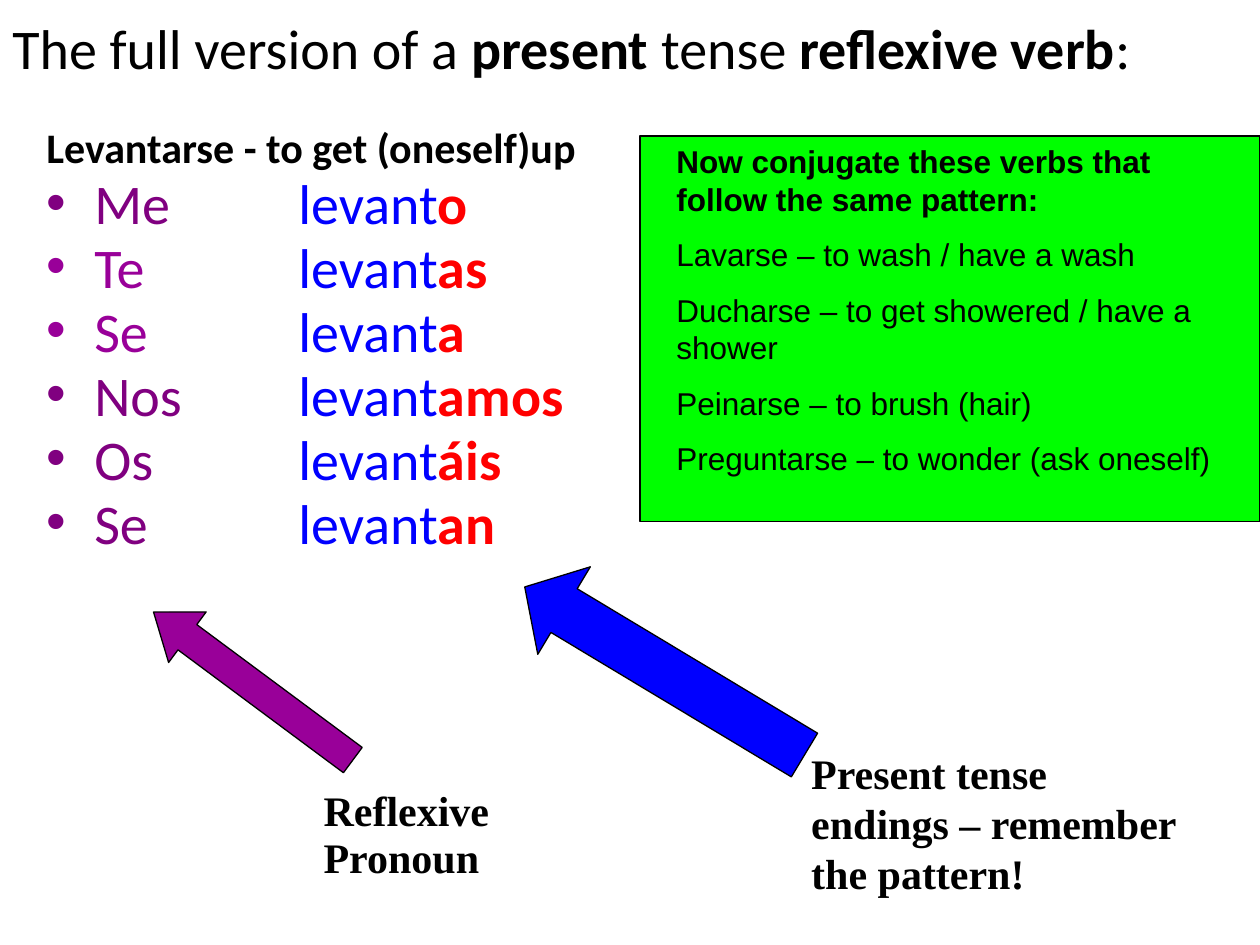
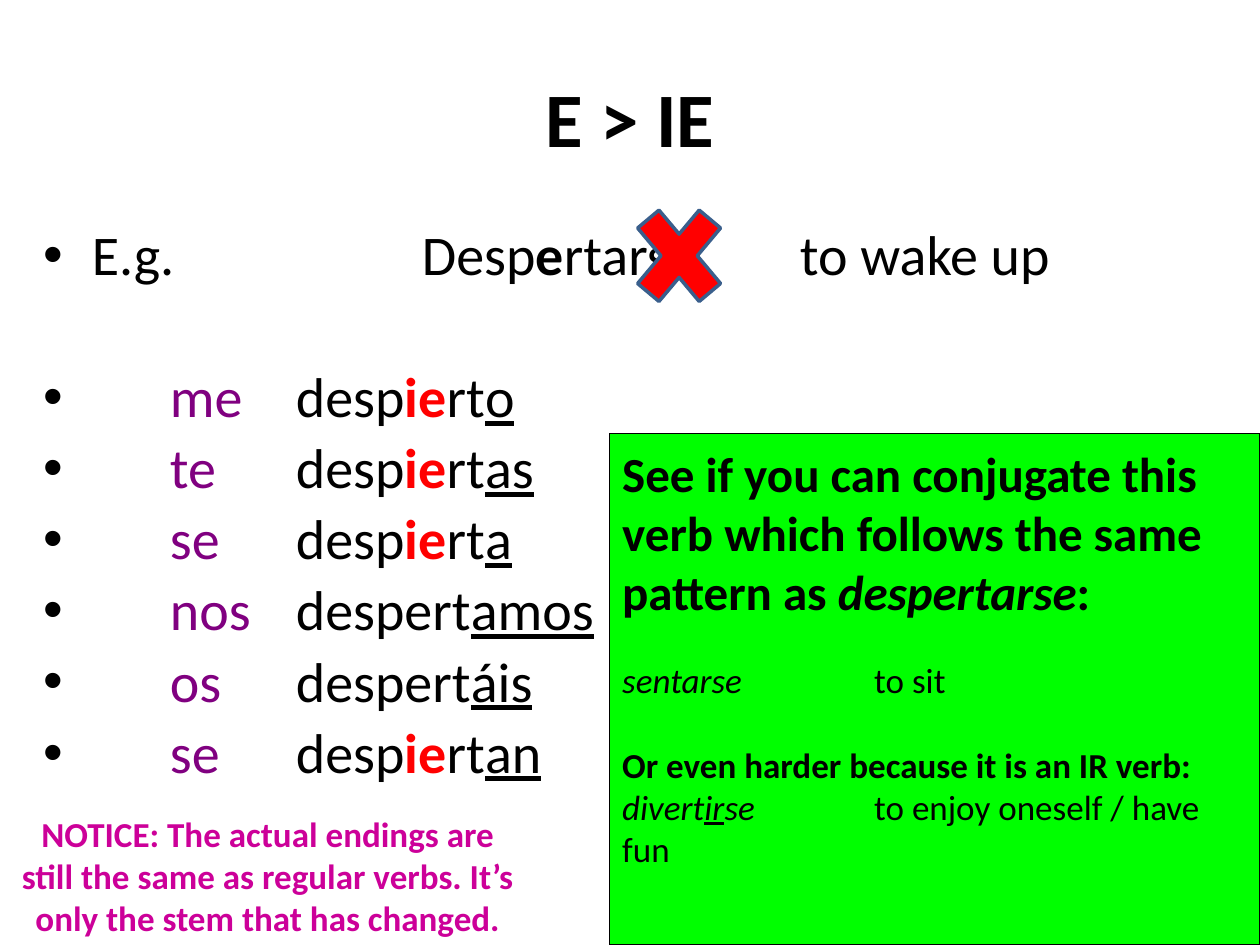
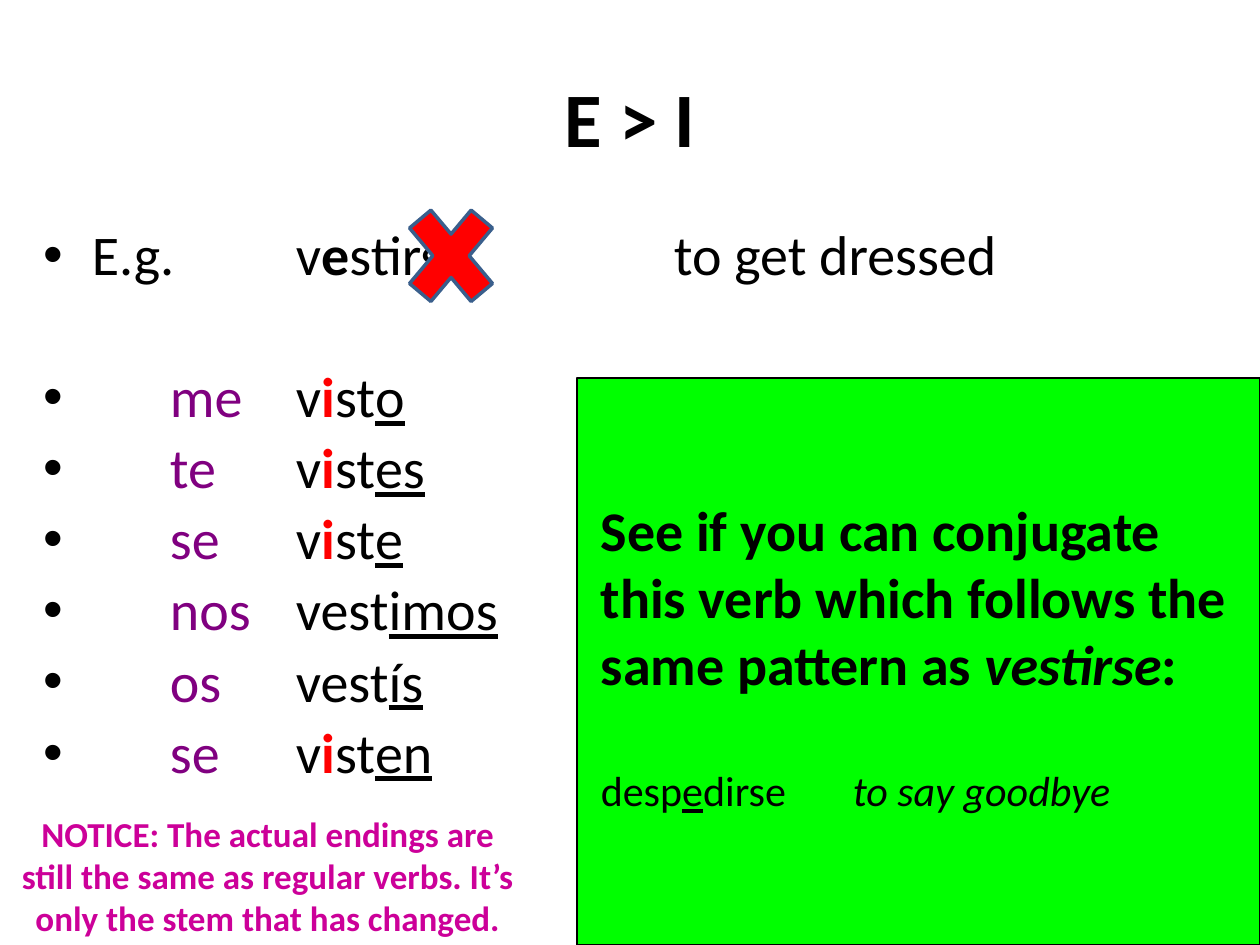
from collections import namedtuple
from dataclasses import dataclass

from lxml import etree
from pptx import Presentation, util as u
from pptx.dml.color import RGBColor
from pptx.enum import shapes, text
from pptx.oxml.ns import qn


@dataclass(frozen=True)
class Theme:
    body: str = "Calibri"
    note: str = "Times New Roman"
    exercise: str = "Arial"
    black: str = "000000"
    panel: str = "00FF00"
    pronoun: str = "800080"
    bright_pronoun: str = "990099"
    stem: str = "0000FF"
    ending: str = "FF0000"
    notice: str = "CC0099"
    cross_edge: str = "3A5F8C"
    heading: int = 44
    list: int = 32
    prompt: int = 28
    label: int = 24
    small: int = 20
    task: int = 18


THEME = Theme()
CELL = 0.25  # the slide is a grid of 40 columns by 30 rows
COLUMNS, ROWS = 40, 30
Run = namedtuple("Run", "text color bold italic underline", defaults=(None,) * 4)
Para = namedtuple("Para", "runs size bold before", defaults=(None, None, None))


def cells(*counts):
    return [u.Inches(count * CELL) for count in counts]


# Text
def style_font(font, color=None, bold=None, italic=None, underline=None):
    if color:
        font.color.rgb = RGBColor.from_string(color)
    font.bold, font.italic, font.underline = bold, italic, underline


def hang_bullet(p_pr):
    p_pr.set("marL", str(u.Inches(0.38)))
    p_pr.set("indent", str(-u.Inches(0.38)))
    etree.SubElement(p_pr, qn("a:buFont")).set("typeface", "Arial")
    etree.SubElement(p_pr, qn("a:buChar")).set("char", "•")


def add_text(slide, area, paras, size, face=THEME.body, color=THEME.black, bold=False,
             before=0, spacing=None, align=None, middle=False, bulleted=()):
    """Write paragraphs in a box; bulleted holds the indexes that get a bullet."""
    frame = slide.shapes.add_textbox(*cells(*area)).text_frame
    frame.word_wrap = True
    frame.vertical_anchor = text.MSO_ANCHOR.MIDDLE if middle else text.MSO_ANCHOR.TOP
    for index, para in enumerate(paras):
        line = frame.paragraphs[0] if index == 0 else frame.add_paragraph()
        p_pr = line._p.get_or_add_pPr()
        p_pr.set("defTabSz", str(u.Inches(1)))
        if index in bulleted:
            hang_bullet(p_pr)
        line.alignment, line.line_spacing = align, spacing
        line.space_before = u.Pt(before if para.before is None else para.before)
        line.font.name, line.font.size = face, u.Pt(para.size or size)
        style_font(line.font, color, bold if para.bold is None else para.bold)
        for part in para.runs:
            part = Run(part) if isinstance(part, str) else part
            run = line.add_run()
            run.text = part.text
            style_font(run.font, *part[1:])


# Shapes
def add_figure(slide, kind, area, fill, edge=THEME.black, weight=0.75, turn=0, adjust=()):
    figure = slide.shapes.add_shape(kind, *cells(*area))
    figure.shadow.inherit = False
    figure.fill.solid()
    figure.fill.fore_color.rgb = RGBColor.from_string(fill)
    figure.line.color.rgb = RGBColor.from_string(edge)
    figure.line.width = u.Pt(weight)
    figure.rotation = turn
    for index, value in enumerate(adjust):
        figure.adjustments[index] = value


def add_panel(slide, left, top, height=None):
    area = (left, top, COLUMNS - left, height or ROWS - top)
    add_figure(slide, shapes.MSO_SHAPE.RECTANGLE, area, THEME.panel)


def add_arrow(slide, area, fill, turn, head):
    add_figure(slide, shapes.MSO_SHAPE.UP_ARROW, area, fill, turn=turn, adjust=(0.5, head))


def strong(words):
    return Run(words, bold=True)


# Slide with the regular pattern
def regular_verb(slide):
    add_text(slide, (0, -1, COLUMNS, 5), [Para([
        "The full version of a ", strong("present"), " tense ",
        strong("reflexive verb"), ":"])], THEME.list, middle=True)

    forms = [("Me \t", THEME.pronoun, "o"), ("Te \t\t", THEME.bright_pronoun, "as"),
             ("Se \t\t", THEME.bright_pronoun, "a"), ("Nos\t", THEME.pronoun, "amos"),
             ("Os \t\t", THEME.pronoun, "áis"), ("Se \t\t", THEME.pronoun, "an")]
    verb = [Para(["Levantarse - to get (oneself)up"], THEME.label, True, 4.5)]
    verb += [Para([Run(pronoun, shade), Run("levant", THEME.stem),
                   Run(ending, THEME.ending, True)]) for pronoun, shade, ending in forms]
    add_text(slide, (1.08, 3.96, 36, 16), verb, THEME.list, before=5.8, spacing=0.8,
             bulleted=range(1, len(verb)))

    add_arrow(slide, (19.48, 16.12, 3.24, 10.36), THEME.stem, 301, 0.45)
    add_arrow(slide, (7.04, 17.84, 2, 7.88), THEME.bright_pronoun, 306.6, 0.67)
    add_text(slide, (9.88, 25.4, 6.68, 2.8), [Para(["Reflexive"]), Para(["Pronoun"])],
             THEME.label, THEME.note, bold=True, before=12.5, spacing=0.5)
    add_text(slide, (25.36, 23.52, 12.64, 5.2),
             [Para(["Present tense endings – remember the pattern!"])],
             THEME.label, THEME.note, bold=True, before=12)

    add_panel(slide, 20.32, 4.32, 12.24)
    verbs = ["Lavarse – to wash / have a wash", "Ducharse – to get showered / have a shower",
             "Peinarse – to brush (hair)", "Preguntarse – to wonder (ask oneself)"]
    tasks = [Para(["Now conjugate these verbs that follow the same pattern:"], bold=True)]
    add_text(slide, (21.08, 4.32, 18.92, 13.12), tasks + [Para([verb]) for verb in verbs],
             THEME.task, THEME.exercise, before=10)


# Slides with a stem change
def conjugation(infinitive, forms):
    rows = [Para(infinitive)]
    for pronoun, start, change, rest, ending in forms:
        stem = [start, Run(change, THEME.ending, True), rest] if change else [start]
        rows.append(Para(["\t", Run(pronoun + "\t", THEME.pronoun), *stem,
                          Run(ending, underline=True)], before=47 if len(rows) == 1 else None))
    return rows


def stem_change(slide, heading, rows, panel, exercise_area, exercise, size, cross_left):
    add_panel(slide, *panel)
    add_text(slide, (2, 1.2, 36, 5), [Para([heading])], THEME.heading, bold=True,
             align=text.PP_ALIGN.CENTER, middle=True)
    add_text(slide, (1, 7, 37, 19.8), rows, THEME.list, before=6, spacing=0.9,
             bulleted=range(len(rows)))
    add_text(slide, exercise_area, exercise, size, middle=True)
    add_text(slide, (0, 25.6, 17, 4.4),
             [Para(["NOTICE: The actual endings are still the same as regular verbs. "
                    "It’s only the stem that has changed."])],
             THEME.small, color=THEME.notice, bold=True, before=10,
             align=text.PP_ALIGN.CENTER)
    add_figure(slide, shapes.MSO_SHAPE.MATH_MULTIPLY, (cross_left, 5.88, 3.76, 4.48),
               THEME.ending, THEME.cross_edge, 2)


def prompt(article_and_verb):
    return Para(["See if you can conjugate this verb which follows the same pattern as ",
                 Run(article_and_verb, italic=True), ":"], bold=True)


def e_to_ie(slide):
    changed, plain = ("desp", "ie", "rt"), ("despert", "", "")
    rows = conjugation(
        ["E.g.\t\tDesp", strong("e"), "rtarse \tto wake up"],
        [("me ", *changed, "o"), ("te ", *changed, "as"), ("se ", *changed, "a"),
         ("nos ", *plain, "amos"), ("os ", *plain, "áis"), ("se ", *changed, "an")])
    exercise = [
        prompt("despertarse"),
        Para([Run("sentarse\t\t", italic=True), "to sit"], THEME.small, before=22),
        Para(["Or even harder because it is an IR verb:"], THEME.small, True, 24.4),
        Para([Run("divert", italic=True), Run("ir", italic=True, underline=True),
              Run("se\t", italic=True), "to enjoy oneself / have fun"], THEME.small)]
    stem_change(slide, "E > IE", rows, (19.36, 13.76), (19.36, 13.84, 20.64, 14),
                exercise, THEME.prompt, 19.68)


def e_to_i(slide):
    changed, plain = ("v", "i", "st"), ("vest", "", "")
    rows = conjugation(
        ["E.g.\tv", strong("e"), "stirse\t\tto get dressed"],
        [("me ", *changed, "o"), ("te", *changed, "es"), ("se ", *changed, "e"),
         ("nos", *plain, "imos"), ("os", *plain, "ís"), ("se", *changed, "en")])
    exercise = [
        prompt("vestirse"),
        Para(["desp", Run("e", underline=True), "dirse\t",
              Run("to say goodbye", italic=True)], THEME.label, before=39)]
    stem_change(slide, "E > I", rows, (18.32, 12), (18.68, 15.48, 21.32, 10.64),
                exercise, THEME.list, 12.44)


def main():
    deck = Presentation()
    deck.slide_width, deck.slide_height = cells(COLUMNS, ROWS)
    blank = deck.slide_layouts[6]
    for build in (regular_verb, e_to_ie, e_to_i):
        build(deck.slides.add_slide(blank))
    deck.save("out.pptx")


if __name__ == "__main__":
    main()
